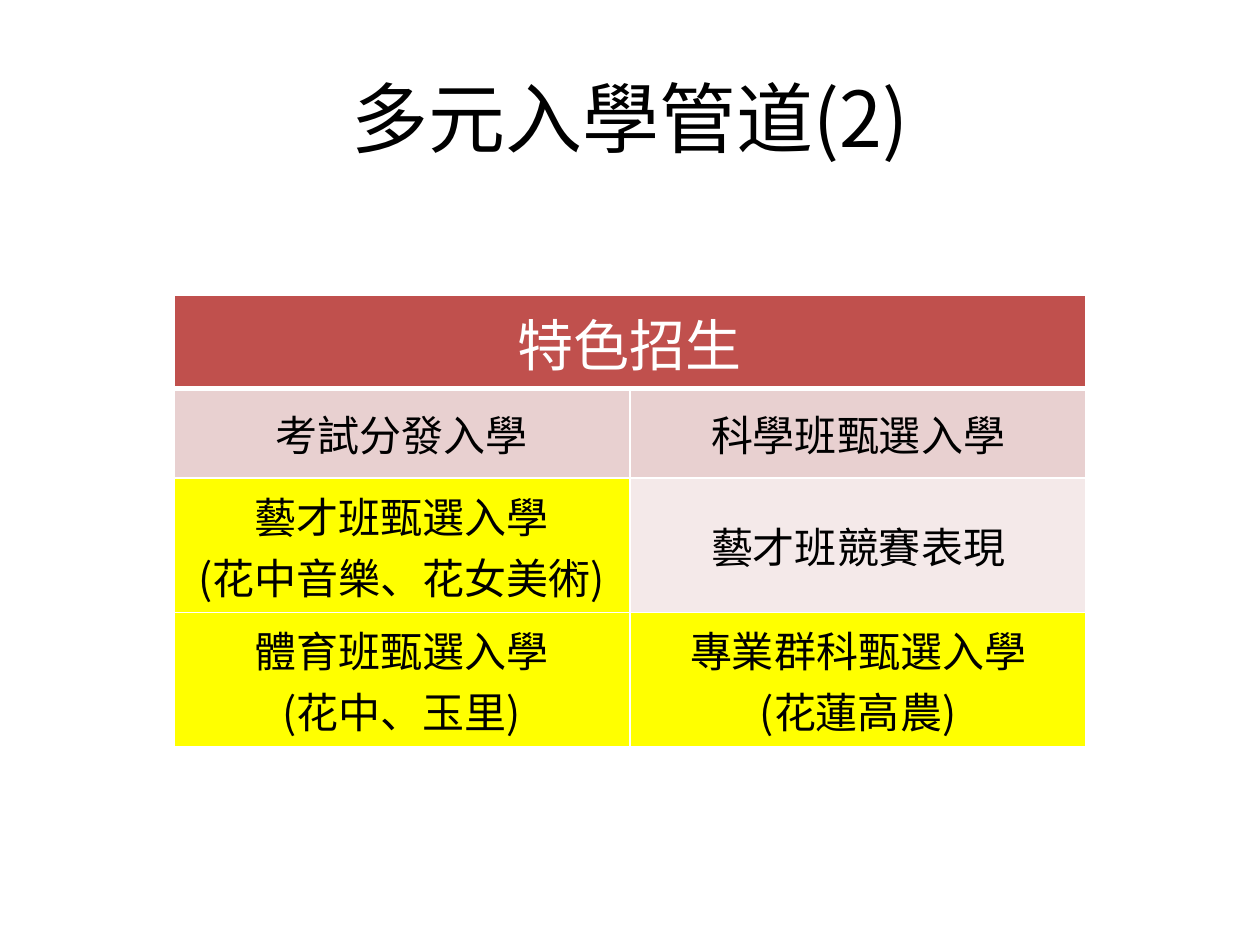
from lxml.etree import SubElement
from pptx import Presentation
from pptx.dml.color import RGBColor
from pptx.enum.text import MSO_ANCHOR as Anchor, PP_ALIGN as Align
from pptx.oxml.ns import qn
from pptx.util import Inches, Pt

FONT = "Noto Sans CJK SC"
BLACK = RGBColor(0x00, 0x00, 0x00)
WHITE = RGBColor(0xFF, 0xFF, 0xFF)
RED = RGBColor(0xC0, 0x50, 0x4D)
PINK = RGBColor(0xE8, 0xD0, 0xD0)
PALE = RGBColor(0xF4, 0xE9, 0xE9)
YELLOW = RGBColor(0xFF, 0xFF, 0x00)

TITLE = "多元入學管道(2)"
HEADER = "特色招生"
CHANNELS = [
    [("考試分發入學", PINK), ("科學班甄選入學", PINK)],
    [("藝才班甄選入學\v(花中音樂、花女美術)", YELLOW), ("藝才班競賽表現", PALE)],
    [("體育班甄選入學\v(花中、玉里)", YELLOW), ("專業群科甄選入學\n(花蓮高農)", YELLOW)],
]
COL_W, ROW_H = 3.62, 0.71


def write(tf, text, size, color):
    tf.text = text
    for p in tf.paragraphs:
        p.alignment = Align.CENTER
        for r in p.runs:
            r.font.size = Pt(size)
            r.font.bold = False
            r.font.name = FONT
            r.font.color.rgb = color
            SubElement(r.font._element, qn("a:ea"), typeface=FONT)


def set_borders(cell, bottom):
    tc_pr = cell._tc.get_or_add_tcPr()
    for side, width in (("L", 1), ("R", 1), ("T", 1), ("B", bottom)):
        ln = SubElement(tc_pr, qn(f"a:ln{side}"), w=str(Pt(width)))
        fill = SubElement(ln, qn("a:solidFill"))
        SubElement(fill, qn("a:srgbClr"), val=str(WHITE))


def format_cell(cell, text, size, color, fill, anchor=Anchor.MIDDLE, bottom=1):
    write(cell.text_frame, text, size, color)
    cell.vertical_anchor = anchor
    set_borders(cell, bottom)
    cell.fill.solid()
    cell.fill.fore_color.rgb = fill


def add_title(s):
    title = s.shapes.title
    title.left, title.top = Inches(0.5), Inches(0.3)
    title.width, title.height = Inches(9), Inches(1.25)
    title.text_frame.vertical_anchor = Anchor.MIDDLE
    write(title.text_frame, TITLE, 44, BLACK)


def add_channel_table(s):
    rows, cols = len(CHANNELS) + 1, len(CHANNELS[0])
    table = s.shapes.add_table(
        rows, cols, Inches(1.38), Inches(2.34),
        Inches(cols * COL_W), Inches(rows * ROW_H),
    ).table
    header = table.cell(0, 0)
    header.merge(table.cell(0, cols - 1))
    format_cell(header, HEADER, 32, WHITE, RED, Anchor.TOP, bottom=3)
    for i, channels in enumerate(CHANNELS, 1):
        for j, (text, fill) in enumerate(channels):
            format_cell(table.cell(i, j), text, 24, BLACK, fill)


def main():
    prs = Presentation()
    prs.slide_width, prs.slide_height = Inches(10), Inches(7.5)
    s = prs.slides.add_slide(prs.slide_layouts[5])
    add_title(s)
    add_channel_table(s)
    prs.save("out.pptx")


if __name__ == "__main__":
    main()
